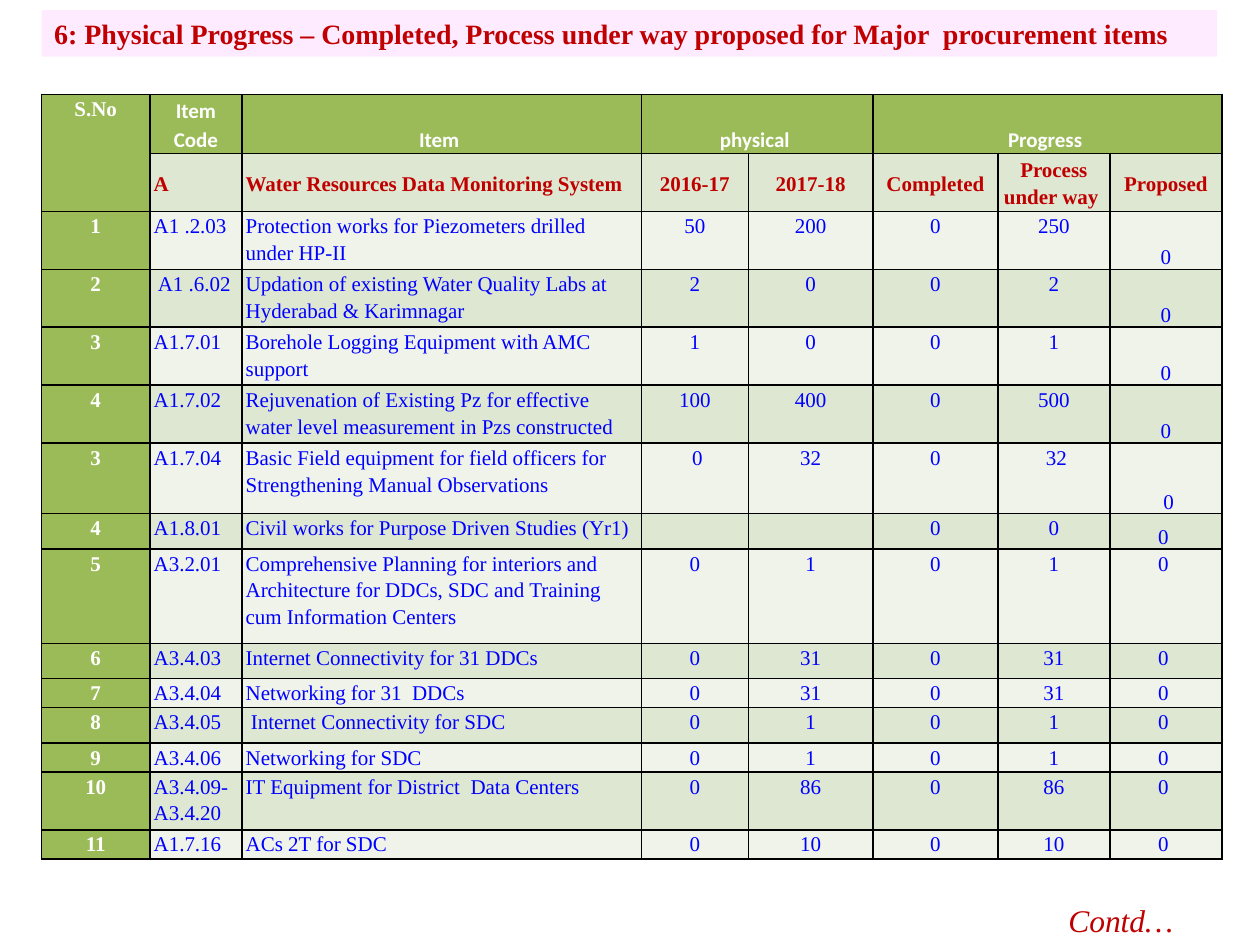
from lxml.etree import SubElement
from pptx import Presentation
from pptx.dml.color import RGBColor
from pptx.enum.text import MSO_ANCHOR, MSO_AUTO_SIZE, PP_ALIGN
from pptx.oxml.ns import qn
from pptx.util import Inches, Pt

THEME = {
    "serif": "Times New Roman", "sans": "Calibri",
    "title_size": 16, "cell_size": 12, "note_size": 18, "border_width": 1,
    "red": "C00000", "blue": "0000FF", "white": "FFFFFF", "black": "000000",
    "title_band": "FFEBFF", "green": "9BBB59", "bands": ("EFF3EA", "DEE7D1"),
}

HEADINGS = [
    ["S.No", "Item Code", "Item ", "physical ", "", "Progress ", "", ""],
    ["", "A", "Water Resources Data Monitoring System", "2016-17", "2017-18",
     "Completed", "Process under way ", "Proposed"],
]
ITEMS = [
    ["1", "A1 .2.03", "Protection works for Piezometers drilled under HP-II", "50", "200", "0", "250", "0"],
    ["2", " A1 .6.02", "Updation of existing Water Quality Labs at Hyderabad & Karimnagar", "2", "0", "0", "2", "0"],
    ["3", "A1.7.01", "Borehole Logging Equipment with AMC support", "1", "0", "0", "1", "0"],
    ["4", "A1.7.02", "Rejuvenation of Existing Pz for effective water level measurement in Pzs constructed",
     "100", "400", "0", "500", "0"],
    ["3", "A1.7.04", "Basic Field equipment for field officers for Strengthening Manual Observations",
     " 0", " 32 ", "0", " 32", " 0"],
    ["4", "A1.8.01", "Civil works for Purpose Driven Studies (Yr1)", "", "", "0", "0", "0 "],
    ["5", "A3.2.01", "Comprehensive Planning for interiors and Architecture for DDCs, SDC and Training "
     "cum Information Centers", "0", "1", "0", "1", "0 "],
    ["6", "A3.4.03", "Internet Connectivity for 31 DDCs", "0", "31", "0", "31", "0 "],
    ["7", "A3.4.04", "Networking for 31  DDCs", "0", "31", "0", "31", "0 "],
    ["8", "A3.4.05", " Internet Connectivity for SDC", "0", "1", "0", "1", "0 "],
    ["9", "A3.4.06", "Networking for SDC", "0", "1", "0", "1", "0 "],
    ["10", "A3.4.09- A3.4.20", "IT Equipment for District  Data Centers", "0", "86", "0", "86", "0 "],
    ["11", "A1.7.16", "ACs 2T for SDC", "0", "10", "0", "10", "0 "],
]
ROWS = HEADINGS + ITEMS
COLUMN_WIDTHS = [0.86, 0.73, 3.17, 0.85, 0.99, 0.99, 0.89, 0.89]
ROW_HEIGHTS = [0.46] * 6 + [0.56, 0.28, 0.75, 0.28, 0.23, 0.28, 0.23, 0.46, 0.23]
LAST_BOTTOM_ROW = 7


def style_text(paragraph, size, color, font=THEME["serif"], bold=False, italic=False):
    for run in paragraph.runs:
        run.font.name = font
        run.font.size = Pt(size)
        run.font.bold = bold
        run.font.italic = italic
        run.font.color.rgb = RGBColor.from_string(color)


def draw_borders(cell):
    properties = cell._tc.get_or_add_tcPr()
    for side in ("lnL", "lnR", "lnT", "lnB"):
        line = SubElement(properties, qn(f"a:{side}"), w=str(Pt(THEME["border_width"])))
        fill = SubElement(line, qn("a:solidFill"))
        SubElement(fill, qn("a:srgbClr"), val=THEME["black"])


deck = Presentation()
deck.slide_width, deck.slide_height = Inches(10), Inches(7.5)
slide = deck.slides.add_slide(deck.slide_layouts[5])
left_margin = Inches(0.33)

title = slide.shapes.title
title.left, title.top = left_margin, Inches(0.08)
title.width, title.height = Inches(9.33), Inches(0.37)
title.fill.solid()
title.fill.fore_color.rgb = RGBColor.from_string(THEME["title_band"])
title.text_frame.text = ("6: Physical Progress – Completed, Process under way proposed "
                         "for Major  procurement items")
title.text_frame.auto_size = MSO_AUTO_SIZE.NONE
title.text_frame.vertical_anchor = MSO_ANCHOR.TOP
title.text_frame.paragraphs[0].alignment = PP_ALIGN.LEFT
style_text(title.text_frame.paragraphs[0], THEME["title_size"], THEME["red"], bold=True)

progress = slide.shapes.add_table(
    len(ROWS), len(COLUMN_WIDTHS), left_margin, Inches(0.75),
    Inches(sum(COLUMN_WIDTHS)), Inches(sum(ROW_HEIGHTS))).table
progress.first_row = progress.horz_banding = False
for column, width in zip(progress.columns, COLUMN_WIDTHS):
    column.width = Inches(width)
for row, height in zip(progress.rows, ROW_HEIGHTS):
    row.height = Inches(height)

for r, texts in enumerate(ROWS):
    for c, text in enumerate(texts):
        cell = progress.cell(r, c)
        cell.margin_left = cell.margin_right = Inches(0.03)
        cell.margin_top = cell.margin_bottom = 0
        draw_borders(cell)
        is_green = r == 0 or c == 0
        cell.fill.solid()
        cell.fill.fore_color.rgb = RGBColor.from_string(
            THEME["green"] if is_green else THEME["bands"][r % 2])

        if r == 1 and c > 0:
            cell.vertical_anchor = MSO_ANCHOR.MIDDLE
        elif (r == 0 and c > 1) or (1 < r <= LAST_BOTTOM_ROW and c == 7):
            cell.vertical_anchor = MSO_ANCHOR.BOTTOM
        else:
            cell.vertical_anchor = MSO_ANCHOR.TOP

        cell.text_frame.text = text
        paragraph = cell.text_frame.paragraphs[0]
        paragraph.line_spacing = 1.15
        paragraph.alignment = PP_ALIGN.LEFT if r > 0 and c in (1, 2) else PP_ALIGN.CENTER
        color = THEME["white"] if is_green else THEME["red"] if r == 1 else THEME["blue"]
        font = THEME["sans"] if r == 0 and c > 0 else THEME["serif"]
        style_text(paragraph, THEME["cell_size"], color, font, bold=r < 2 or c == 0)
        if not text:
            SubElement(paragraph._p, qn("a:endParaRPr"), sz=str(THEME["cell_size"] * 100))

for first, last in (((0, 0), (1, 0)), ((0, 3), (0, 4)), ((0, 5), (0, 7))):
    progress.cell(*first).merge(progress.cell(*last))

continuation = slide.shapes.add_textbox(Inches(8.38), Inches(7.1), Inches(1.21), Inches(0.4))
continuation.text_frame.word_wrap = True
continuation.text_frame.text = "Contd…"
style_text(continuation.text_frame.paragraphs[0], THEME["note_size"], THEME["red"], italic=True)

deck.save("out.pptx")
